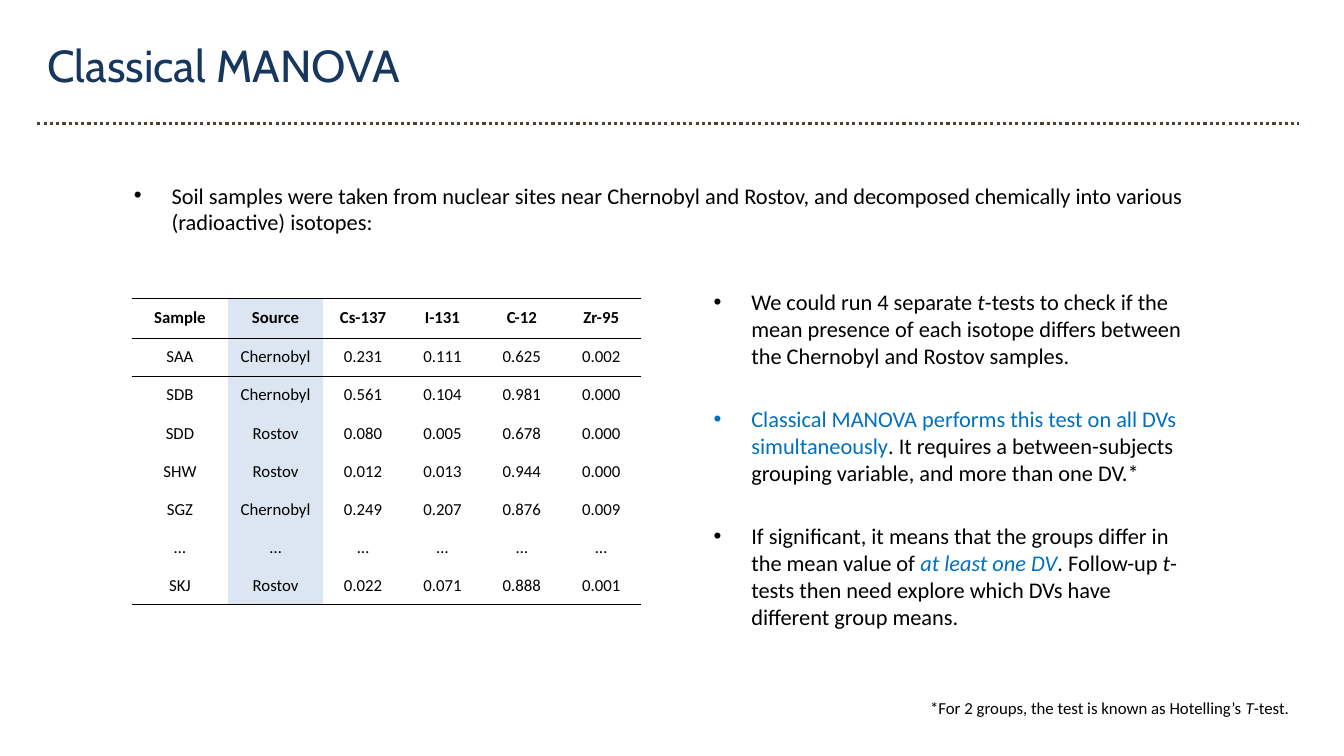
from dataclasses import dataclass

from lxml import etree
from pptx import Presentation, util as u
from pptx.dml.color import RGBColor
from pptx.enum import dml, shapes, text
from pptx.oxml.ns import qn


@dataclass(frozen=True)
class Theme:
    ink: str = "000000"
    head: str = "17375E"
    rule: str = "4A452A"
    mark: str = "0070C0"
    tint: str = "DCE6F2"
    face: str = "Calibri"
    title: str = "Cabin"
    big: int = 32
    mid: int = 16
    small: int = 12


T = Theme()
PLAIN = {"size": T.mid, "name": T.face, "color": T.ink}
ITAL = PLAIN | {"italic": True}
BLUE = PLAIN | {"color": T.mark}
NOTE = PLAIN | {"size": T.small}
HEAD = {"size": T.big, "name": T.title, "color": T.head}

NO_STYLE = "{2D5ABB26-0587-4C30-8999-92F81FD0307C}"
GAP = 26  # points between the right-hand bullets

INTRO = [[("Soil samples were taken from nuclear sites near Chernobyl and "
           "Rostov, and decomposed chemically into various (radioactive) "
           "isotopes:", PLAIN)]]
POINTS = [
    [("We could run 4 separate ", PLAIN), ("t", ITAL),
     ("-tests to check if the mean presence of each isotope differs between "
      "the Chernobyl and Rostov samples.", PLAIN)],
    [("Classical MANOVA performs this test on all DVs simultaneously", BLUE),
     (". It requires a between-subjects grouping variable, and more than "
      "one DV.*", PLAIN)],
    [("If significant, it means that the groups differ in the mean value of ",
      PLAIN),
     ("at least one DV", BLUE | {"italic": True}),
     (". Follow-up ", PLAIN), ("t", ITAL),
     ("-tests then need explore which DVs have different group means.",
      PLAIN)],
]
FOOT = [("*For 2 groups, the test is known as Hotelling’s ", NOTE),
        ("T", NOTE | {"italic": True}), ("-test.", NOTE)]
ROWS = [
    ("Sample", "Source", "Cs-137", "I-131", "C-12", "Zr-95"),
    ("SAA", "Chernobyl", "0.231", "0.111", "0.625", "0.002"),
    ("SDB", "Chernobyl", "0.561", "0.104", "0.981", "0.000"),
    ("SDD", "Rostov", "0.080", "0.005", "0.678", "0.000"),
    ("SHW", "Rostov", "0.012", "0.013", "0.944", "0.000"),
    ("SGZ", "Chernobyl", "0.249", "0.207", "0.876", "0.009"),
    ("…",) * 6,
    ("SKJ", "Rostov", "0.022", "0.071", "0.888", "0.001"),
]


def place(shape, *box):
    for name, size in zip(("left", "top", "width", "height"), box):
        setattr(shape, name, u.Cm(size))


def write(para, runs):
    for words, form in runs:
        run = para.add_run()
        run.text = words
        for key, value in form.items():
            if key == "color":
                run.font.color.rgb = RGBColor.from_string(value)
            else:
                setattr(run.font, key, u.Pt(value) if key == "size" else value)


def title(shape, words):
    place(shape, 0.94, 0.81, 29.59, 1.63)
    frame = shape.text_frame
    frame.auto_size = text.MSO_AUTO_SIZE.NONE
    frame.vertical_anchor = text.MSO_ANCHOR.MIDDLE
    para = frame.paragraphs[0]
    para.alignment = text.PP_ALIGN.LEFT
    write(para, [(words, HEAD)])


def bullets(shape, items, *box):
    place(shape, *box)
    frame = shape.text_frame
    frame.auto_size = text.MSO_AUTO_SIZE.NONE
    for n, runs in enumerate(items):
        para = frame.add_paragraph() if n else frame.paragraphs[0]
        para.space_before = u.Pt(GAP if n else 3)
        props = para._p.get_or_add_pPr()
        for key, size in {"marL": 0.95, "indent": -0.95}.items():
            props.set(key, str(u.Cm(size)))
        write(para, runs)


def rule(slide, left, right, y):
    line = slide.shapes.add_connector(
        shapes.MSO_CONNECTOR.STRAIGHT, *map(u.Cm, (left, y, right, y)))
    line.line.color.rgb = RGBColor.from_string(T.rule)
    line.line.width = u.Pt(2.25)
    line.line.dash_style = dml.MSO_LINE.ROUND_DOT
    etree.SubElement(line._element.spPr, qn("a:effectLst"))


def border(cell, side):
    edge = etree.SubElement(cell._tc.get_or_add_tcPr(), qn("a:" + side),
                            w=str(u.Pt(1)))
    fill = etree.SubElement(edge, qn("a:solidFill"))
    etree.SubElement(fill, qn("a:srgbClr"), val=T.ink)


def grid(slide, rows):
    table = slide.shapes.add_table(
        len(rows), len(rows[0]),
        *map(u.Cm, (3.33, 7.52, 12.82, 7.72))).table
    table.first_row = table.horz_banding = False
    table._tbl.tblPr.find(qn("a:tableStyleId")).text = NO_STYLE
    for c, col in enumerate(table.columns):
        col.width = u.Cm(2.41 if c < 2 else 2)
    for r, row in enumerate(table.rows):
        row.height = u.Cm(0.96 if r else 1)
        for c, cell in enumerate(row.cells):
            cell.vertical_anchor = text.MSO_ANCHOR.MIDDLE
            para = cell.text_frame.paragraphs[0]
            para.alignment = text.PP_ALIGN.CENTER
            write(para, [(rows[r][c], NOTE | {"bold": r == 0})])
            # Lines frame the header, the first sample and the table end
            if r < 2:
                border(cell, "lnT")
            if r in (0, 1, len(rows) - 1):
                border(cell, "lnB")
            if c == 1:
                cell.fill.solid()
                cell.fill.fore_color.rgb = RGBColor.from_string(T.tint)
            else:
                cell.fill.background()


def note(slide, runs, *box):
    frame = slide.shapes.add_textbox(*map(u.Cm, box)).text_frame
    frame.word_wrap = False
    frame.auto_size = text.MSO_AUTO_SIZE.SHAPE_TO_FIT_TEXT
    write(frame.paragraphs[0], runs)


def main():
    deck = Presentation()
    deck.slide_width, deck.slide_height = u.Cm(33.87), u.Cm(19.05)
    slide = deck.slides.add_slide(deck.slide_layouts[3])
    head, intro, points = slide.placeholders

    # Heading
    title(head, "Classical MANOVA")
    rule(slide, 0.94, 32.74, 3.12)

    # Content
    bullets(intro, INTRO, 3.12, 4.45, 27.2, 13.69)
    grid(slide, ROWS)
    bullets(points, POINTS, 17.73, 7.14, 12.6, 9.55)

    # Footnote
    note(slide, FOOT, 23.19, 17.45, 9.6, 0.76)

    deck.save("out.pptx")


if __name__ == "__main__":
    main()
